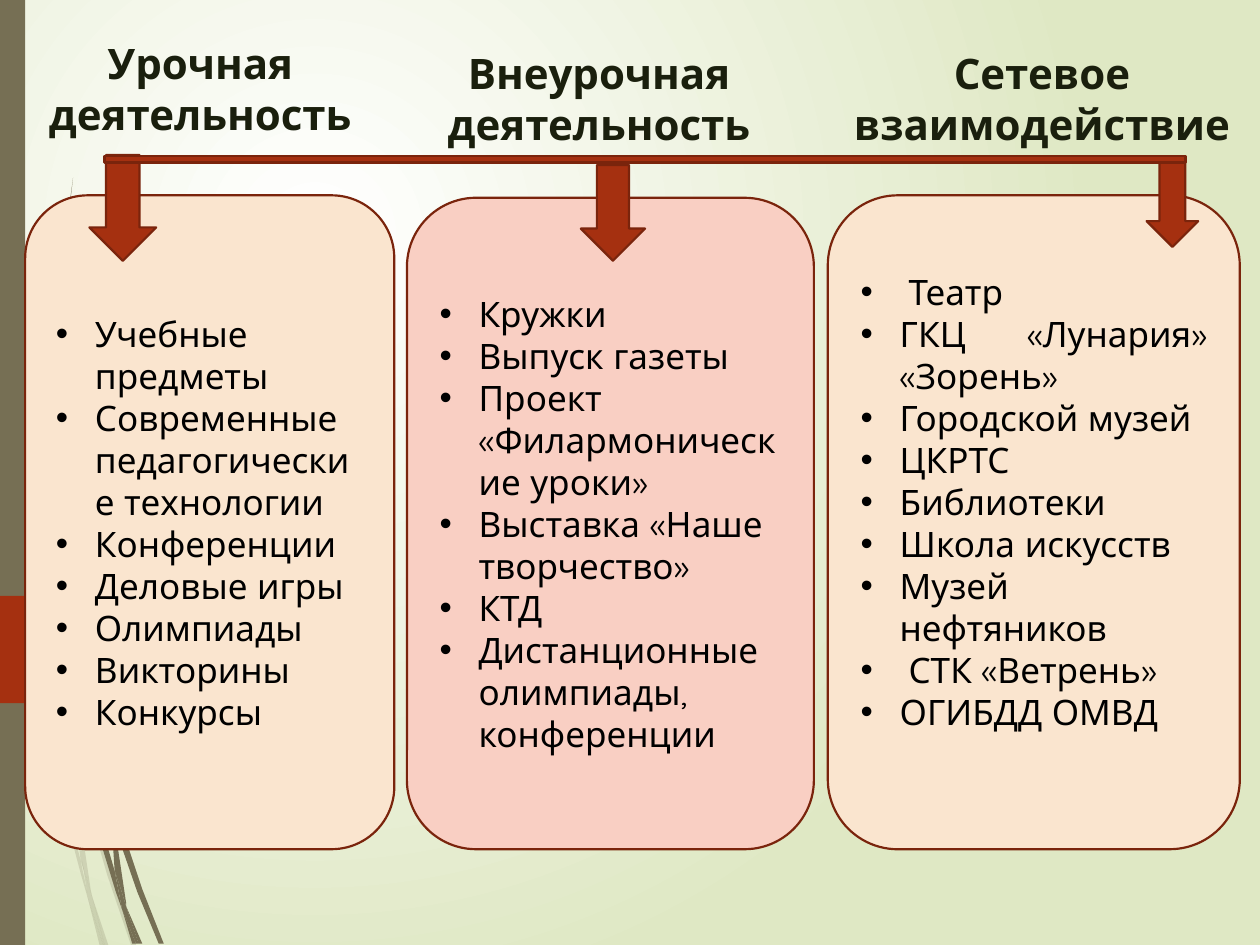
"""Build a slide with three columns of school activity linked by arrows."""
from dataclasses import dataclass

from pptx import Presentation
from pptx.dml.color import RGBColor
from pptx.enum.shapes import MSO_SHAPE
from pptx.enum.text import MSO_ANCHOR, PP_ALIGN
from pptx.oxml import parse_xml
from pptx.oxml.ns import nsdecls, qn
from pptx.util import Pt
from lxml.etree import SubElement

PX = 9144


@dataclass
class Theme:
    white: str = "FFFFFF"
    green: str = "DFE8C4"
    olive: str = "766F54"
    rust: str = "A53010"
    edge: str = "7A240C"
    cream: str = "FAE5CF"
    pink: str = "F9CFC3"
    ink: str = "000000"
    dark: str = "1A1F0D"
    font: str = "Quicksand"
    head: int = 24
    body: int = 20
    line: float = 1.25


theme = Theme()


def paint(shape, fill, edge=None):
    shape.shadow.inherit = False
    shape.fill.solid()
    shape.fill.fore_color.rgb = RGBColor.from_string(fill)
    if edge:
        shape.line.color.rgb = RGBColor.from_string(edge)
        shape.line.width = Pt(theme.line)
    else:
        shape.line.fill.background()


def write(para, text, size, color, align, bold=False):
    para.text = text
    para.alignment = align
    para.font.name = theme.font
    para.font.size = Pt(size)
    para.font.bold = bold
    para.font.color.rgb = RGBColor.from_string(color)


deck = Presentation()
deck.slide_width, deck.slide_height = 1000 * PX, 750 * PX
slide = deck.slides.add_slide(deck.slide_layouts[6])
shapes = slide.shapes

back = slide.background.fill
back.gradient()
for stop, color in zip(back.gradient_stops, (theme.white, theme.green)):
    stop.color.rgb = RGBColor.from_string(color)
lin = slide.element.xpath(".//p:bg//a:lin")[0]
lin.getparent().replace(lin, parse_xml(
    f'<a:path {nsdecls("a")} path="circle">'
    '<a:fillToRect l="50000" t="50000" r="100000" b="100000"/></a:path>'))

pale = [
    [(64, 607), (61, 596), (61, 610), (85, 694), (104, 750), (108, 750), (88, 692)],
    [(83, 750), (86, 750), (73, 711)],
    [(64, 683), (48, 619), (22, 469), (12, 376), (8, 350), (19, 470), (45, 621),
     (64, 693), (70, 714), (69, 707)],
    [(58, 599), (60, 646), (64, 683), (67, 692), (73, 711), (72, 706), (63, 646),
     (61, 610), (61, 608)],
    [(70, 714), (79, 750), (82, 750)],
    [(67, 692), (65, 683), (69, 707), (70, 714), (82, 750), (83, 750), (73, 711)],
]
deep = [
    [(94, 649), (91, 641), (91, 656), (109, 708), (126, 749), (130, 749), (113, 706)],
    [(91, 691), (81, 657), (60, 556), (53, 505), (47, 477), (56, 557), (77, 659),
     (92, 708), (97, 722), (96, 717)],
    [(50, 472), (48, 453), (44, 349), (48, 245), (52, 193), (58, 141), (51, 193),
     (47, 245), (43, 349), (45, 449), (49, 472)],
    [(110, 749), (113, 749), (100, 719)],
    [(97, 722), (105, 749), (108, 749)],
    [(88, 645), (91, 691), (96, 706), (100, 719), (100, 716), (91, 656), (90, 651)],
    [(96, 706), (91, 691), (96, 717), (97, 722), (108, 749), (110, 749), (100, 719)],
]
for blades, alpha in ((pale, 20), (deep, 100)):
    for start, *rest in blades:
        pen = shapes.build_freeform(*start, scale=PX)
        pen.add_line_segments(rest, close=True)
        blade = pen.convert_to_shape()
        paint(blade, theme.olive)
        if alpha < 100:
            tint = blade.element.xpath("./p:spPr/a:solidFill/a:srgbClr")[0]
            SubElement(tint, qn("a:alpha")).set("val", str(alpha * 1000))

strip = shapes.add_shape(MSO_SHAPE.RECTANGLE, 0, 0, 20 * PX, 750 * PX)
paint(strip, theme.olive)
tab = shapes.add_shape(MSO_SHAPE.PENTAGON, 0, 473 * PX, 150 * PX, 85 * PX)
paint(tab, theme.rust)

cards = [
    ((20, 155, 293, 519), (-0.2, 0.5, 0.17), theme.cream, PP_ALIGN.LEFT, 5,
     ["Учебные предметы", "Современные педагогические технологии", "Конференции",
      "Деловые игры", "Олимпиады", "Викторины", "Конкурсы"]),
    ((323, 157, 323, 517), (-0.22, 0.5, 0.17), theme.pink, PP_ALIGN.LEFT, 5,
     ["Кружки", "Выпуск газеты", "Проект «Филармонические уроки»",
      "Выставка «Наше творчество»", "КТД", "Дистанционные олимпиады, конференции"]),
    ((657, 155, 327, 519), (-0.19, 0.5, 0.17), theme.cream, PP_ALIGN.JUSTIFY, 38,
     ["Театр", "ГКЦ «Лунария» «Зорень»", "Городской музей", "ЦКРТС", "Библиотеки",
      "Школа искусств", "Музей нефтяников", "СТК «Ветрень»", "ОГИБДД ОМВД"]),
]
wide = ("Театр", "СТК «Ветрень»")
for box, bends, fill, align, foot, items in cards:
    card = shapes.add_shape(MSO_SHAPE.ROUNDED_RECTANGULAR_CALLOUT, *(n * PX for n in box))
    for i, bend in enumerate(bends):
        card.adjustments[i] = bend
    paint(card, fill, theme.edge)
    frame = card.text_frame
    frame.word_wrap = True
    frame.vertical_anchor = MSO_ANCHOR.MIDDLE
    frame.margin_bottom = foot * PX
    for i, item in enumerate(items):
        para = frame.add_paragraph() if i else frame.paragraphs[0]
        write(para, item, theme.body, theme.ink, align)
        props = para._p.get_or_add_pPr()
        dent = (38 if item in wide else 31) * PX
        props.set("marL", str(dent))
        props.set("indent", str(-dent))
        SubElement(props, qn("a:buFont")).set("typeface", "Arial")
        SubElement(props, qn("a:buChar")).set("char", "•")
        props.append(props.find(qn("a:defRPr")))

heads = [
    ("Урочная деятельность", (-20, 25, 358, 91)),
    ("Внеурочная деятельность", (324, 33, 303, 91)),
    ("Сетевое взаимодействие", (654, 33, 346, 91)),
]
for text, box in heads:
    head = shapes.add_textbox(*(n * PX for n in box))
    head.text_frame.word_wrap = True
    write(head.text_frame.paragraphs[0], text, theme.head, theme.dark, PP_ALIGN.CENTER, True)

marks = [
    (MSO_SHAPE.DOWN_ARROW, (71, 123, 53, 84)),
    (MSO_SHAPE.DOWN_ARROW, (461, 131, 51, 76)),
    (MSO_SHAPE.DOWN_ARROW, (910, 125, 41, 71)),
    (MSO_SHAPE.RECTANGLE, (83, 124, 858, 5)),
]
for kind, box in marks:
    mark = shapes.add_shape(kind, *(n * PX for n in box))
    paint(mark, theme.rust, theme.edge)

deck.save("out.pptx")
